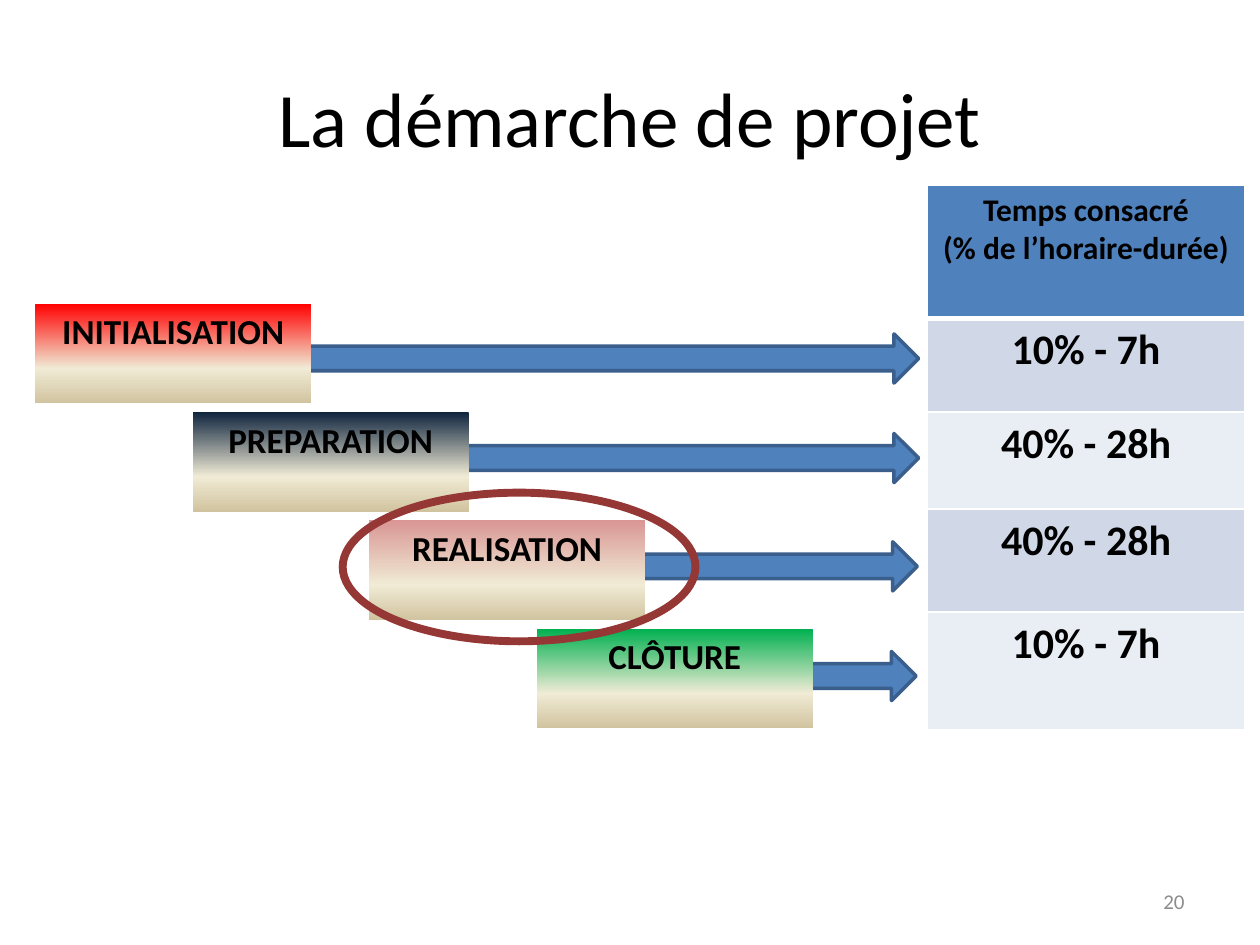
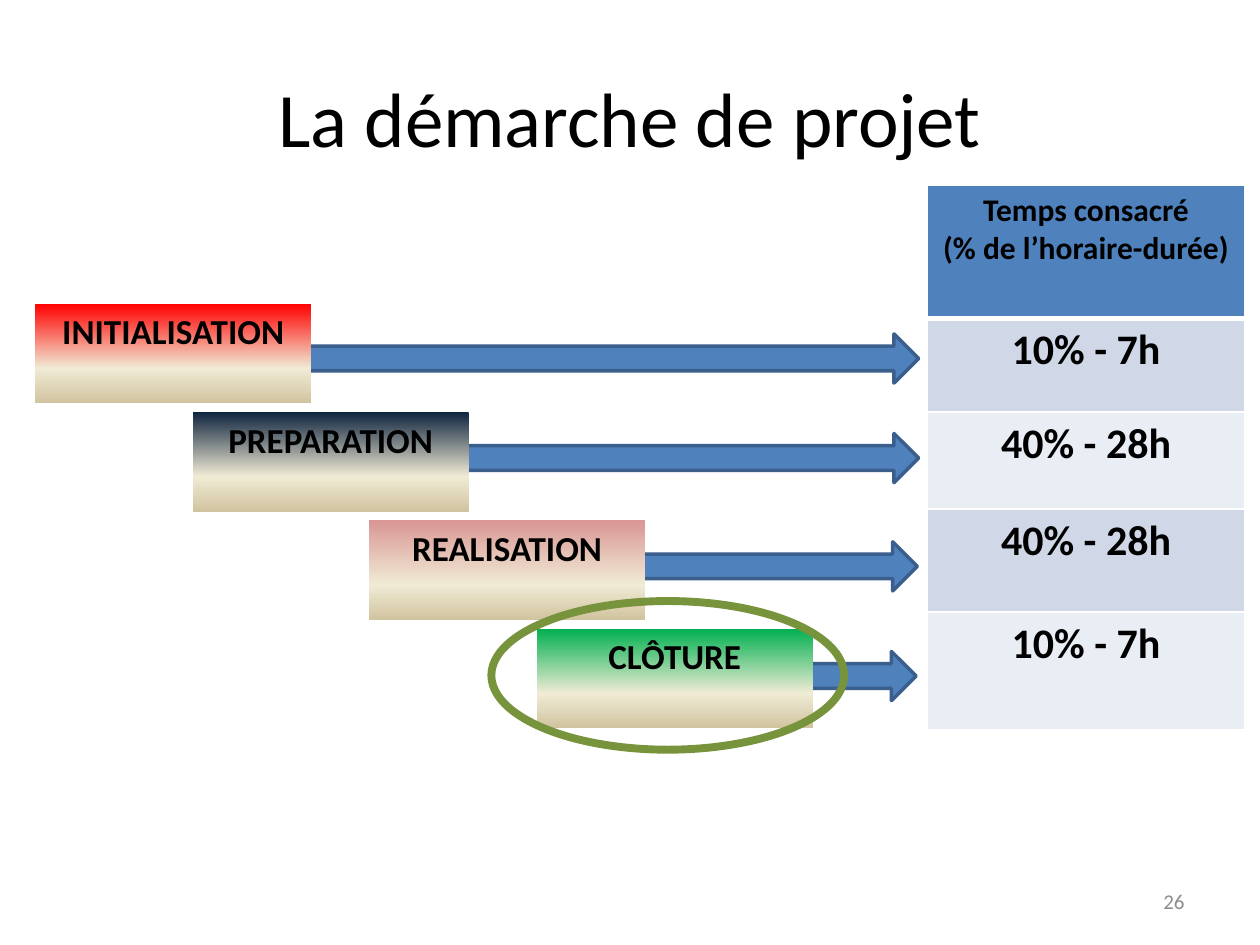
from copy import deepcopy

from pptx import Presentation
from pptx.dml.color import RGBColor
from pptx.enum.shapes import MSO_SHAPE
from pptx.enum.text import MSO_ANCHOR, PP_ALIGN
from pptx.oxml.ns import qn
from pptx.util import Pt
from lxml import etree

RECT, ARROW, OVAL = MSO_SHAPE.RECTANGLE, MSO_SHAPE.RIGHT_ARROW, MSO_SHAPE.OVAL
CENTER, RIGHT = PP_ALIGN.CENTER, PP_ALIGN.RIGHT
TOP, MIDDLE = MSO_ANCHOR.TOP, MSO_ANCHOR.MIDDLE

BLACK = RGBColor(0x00, 0x00, 0x00)
GREY = RGBColor(0x8C, 0x8C, 0x8C)
BLUE = RGBColor(0x4F, 0x81, 0xBD)
NAVY = RGBColor(0x3A, 0x5F, 0x8C)
BANDS = RGBColor(0xD0, 0xD8, 0xE8), RGBColor(0xE9, 0xED, 0xF4)
CREAM = RGBColor(0xF0, 0xEB, 0xD5)
SAND = RGBColor(0xD1, 0xC3, 0x9F)
RED = RGBColor(0xFF, 0x00, 0x00)
INK = RGBColor(0x0F, 0x24, 0x3E)
ROSE = RGBColor(0xD9, 0x96, 0x94)
GREEN = RGBColor(0x00, 0xB0, 0x50)
BRICK = RGBColor(0x95, 0x37, 0x35)
OLIVE = RGBColor(0x77, 0x93, 0x3C)
WHITE = "FFFFFF"

FONT = "Calibri"
PX = 9144  # 100 px to the inch
STEP_TOP, STEP_GAP, STEP_W, STEP_H = 241, 86, 219, 79
ARROW_H = 39

# name, colour, step left, arrow left, arrow top, arrow end, time
STEPS = [
    ("INITIALISATION", RED, 28, 217, 265, 729, "10% - 7h"),
    ("PREPARATION", INK, 153, 327, 344, 729, "40% - 28h"),
    ("REALISATION", ROSE, 293, 500, 430, 728, "40% - 28h"),
    ("CLÔTURE", GREEN, 426, 602, 517, 727, "10% - 7h"),
]
HEAD = "Temps consacré\n(% de l’horaire-durée)"
ROWS = [106, 74, 77, 82, 93]

# slide number, ringed step, ring left, ring colour
SLIDES = [(20, 2, 272, BRICK), (26, 3, 390, OLIVE)]


def px(*sizes):
    return [size * PX for size in sizes]


class Deck:
    def __init__(self):
        self.prs = Presentation()
        self.prs.slide_width, self.prs.slide_height = px(1000, 750)

    def add(self):
        self.slide = self.prs.slides.add_slide(self.prs.slide_layouts[6])

    def put(self, frame, text, size, bold=False, color=BLACK, align=CENTER):
        """Fill a text frame and format its runs."""
        frame.text = text
        for par in frame.paragraphs:
            par.alignment = align
            for run in par.runs:
                font = run.font
                font.name, font.size, font.bold = FONT, Pt(size), bold
                font.color.rgb = color

    def label(self, box, text, size, **style):
        frame = self.slide.shapes.add_textbox(*px(*box)).text_frame
        frame.word_wrap = True
        frame.vertical_anchor = MIDDLE
        self.put(frame, text, size, **style)

    def shape(self, kind, box, fill=None, line=None, width=0):
        shape = self.slide.shapes.add_shape(kind, *px(*box))
        shape.shadow.inherit = False
        if fill is None:
            shape.fill.background()
        else:
            shape.fill.solid()
            shape.fill.fore_color.rgb = fill
        if line is None:
            shape.line.fill.background()
        else:
            shape.line.color.rgb = line
            shape.line.width = Pt(width)
        return shape

    def step(self, box, text, color):
        """Draw a box that fades downwards from color to sand."""
        shape = self.shape(RECT, box)
        fill = shape.fill
        fill.gradient()
        fill.gradient_angle = 270
        stops = shape.element.spPr.find(qn("a:gradFill")).find(qn("a:gsLst"))
        stops.append(deepcopy(stops[-1]))
        fades = [(0, color), (0.65, CREAM), (1, SAND)]
        for stop, (place, tint) in zip(fill.gradient_stops, fades):
            stop.position = place
            stop.color.rgb = tint
        shape.text_frame.vertical_anchor = TOP
        self.put(shape.text_frame, text, 20, bold=True)

    def edge(self, cell, side, width):
        line = etree.SubElement(cell._tc.get_or_add_tcPr(), qn("a:ln" + side),
                                w=str(Pt(width)))
        fill = etree.SubElement(line, qn("a:solidFill"))
        etree.SubElement(fill, qn("a:srgbClr"), val=WHITE)

    def table(self, box, rows, texts):
        """Draw one column with a blue head and banded rows."""
        table = self.slide.shapes.add_table(len(rows), 1, *px(*box)).table
        for i, (high, text) in enumerate(zip(rows, texts)):
            table.rows[i].height = high * PX
            cell = table.cell(i, 0)
            cell.margin_left = cell.margin_right = 0
            thick = {0: "B", 1: "T"}.get(i)
            for side in "LRTB":
                self.edge(cell, side, 3 if side == thick else 1)
            cell.fill.solid()
            cell.fill.fore_color.rgb = BANDS[(i - 1) % 2] if i else BLUE
            self.put(cell.text_frame, text, 24 if i else 18, bold=True)


def main():
    deck = Deck()
    for number, ringed, left, color in SLIDES:
        deck.add()
        for _, _, _, start, top, end, _ in STEPS:
            deck.shape(ARROW, (start, top, end - start, ARROW_H), BLUE, NAVY, 2)
        deck.label((50, 30, 900, 125), "La démarche de projet", 44)
        for i, (name, tint, x, *_) in enumerate(STEPS):
            deck.step((x, STEP_TOP + i * STEP_GAP, STEP_W, STEP_H), name, tint)
        times = [step[-1] for step in STEPS]
        deck.table((736, 147, 252, sum(ROWS)), ROWS, [HEAD, *times])
        ring_top = STEP_TOP + ringed * STEP_GAP - 22
        deck.shape(OVAL, (left, ring_top, 280, 118), line=color, width=4.5)
        deck.label((717, 695, 233, 40), str(number), 12, color=GREY, align=RIGHT)
    deck.prs.save("out.pptx")


if __name__ == "__main__":
    main()
